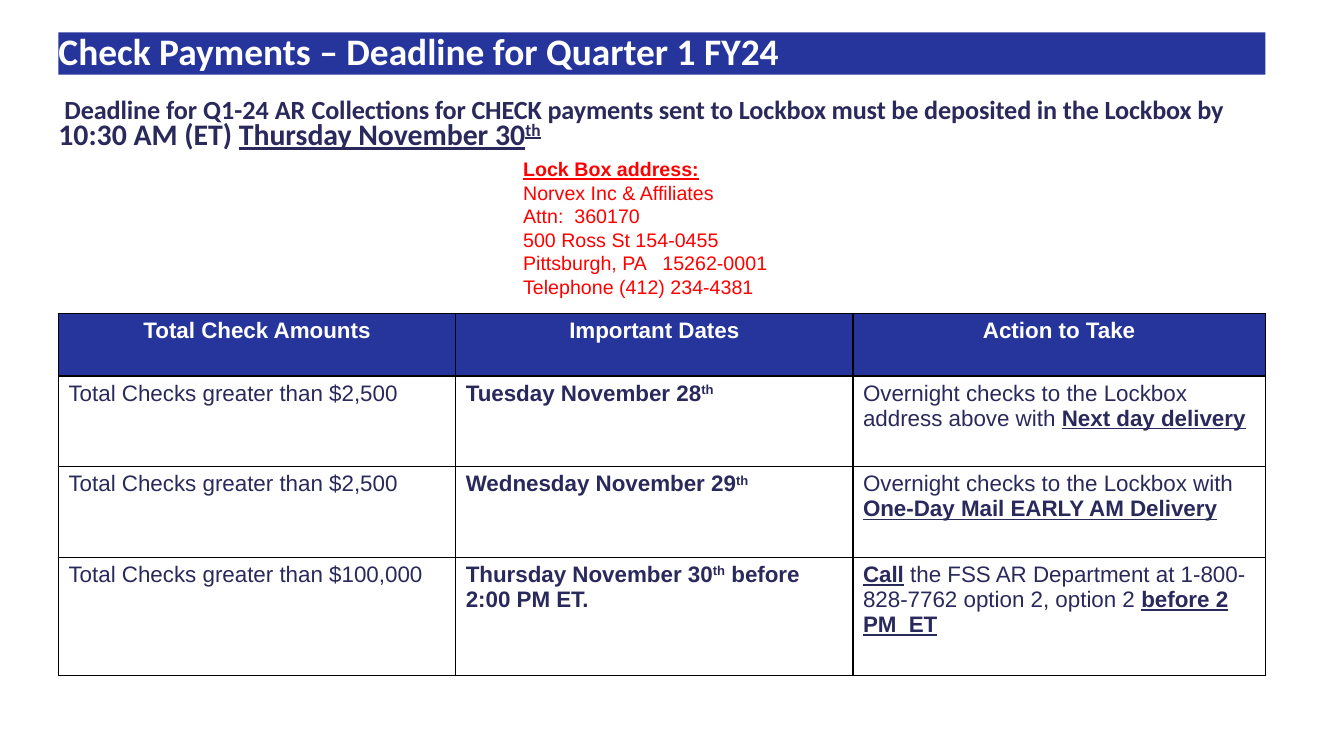
import pptx
import pptx.util
import pptx.dml.color
import pptx.enum.shapes
import pptx.enum.text
from lxml import etree
from pptx.oxml.ns import qn

Inches = pptx.util.Inches
Pt = pptx.util.Pt
RGBColor = pptx.dml.color.RGBColor
Align = pptx.enum.text.PP_ALIGN

BLUE = RGBColor(0x25, 0x35, 0x9C)
NAVY = RGBColor(0x2A, 0x29, 0x5C)
WHITE = RGBColor(0xFF, 0xFF, 0xFF)
RED = RGBColor(0xFF, 0x00, 0x00)
BORDER = "000000"

PLAIN = {"bold": False}
BOLD = {"bold": True}
STRONG = {"bold": True, "underline": True}
SUPER = {"bold": True, "baseline": 30000}
TIGHT = {"bold": True, "spc": -10}
LARGE = {"bold": True, "size": Pt(21.3)}

TITLE = [("Check Payments – Deadline for Quarter 1 FY24", BOLD)]
DEADLINE = [
    ("Deadline ", TIGHT),
    ("for Q1-24 AR ", BOLD),
    ("Collections for CHECK payments sent to Lockbox must be deposited in the Lockbox by ", TIGHT),
    ("10:30 AM (ET) ", LARGE),
    ("Thursday November 30", LARGE | STRONG),
    ("th", LARGE | STRONG | SUPER),
]
ADDRESS = [
    ("Lock Box address:", STRONG),
    ("Norvex Inc & Affiliates", PLAIN),
    ("Attn:  360170", PLAIN),
    ("500 Ross St 154-0455", PLAIN),
    ("Pittsburgh, PA   15262-0001", PLAIN),
    ("Telephone (412) 234-4381", PLAIN),
]
HEADINGS = ["Total Check Amounts", "Important Dates", "Action to Take"]
ACTIONS = [
    (
        [("Total Checks greater than $2,500", PLAIN)],
        [("Tuesday November 28", BOLD), ("th", SUPER)],
        [("Overnight checks to the Lockbox address above with ", PLAIN), ("Next day delivery", STRONG)],
    ),
    (
        [("Total Checks greater than $2,500", PLAIN)],
        [("Wednesday November 29", BOLD), ("th", SUPER)],
        [("Overnight checks to the Lockbox with ", PLAIN), ("One-Day Mail EARLY AM Delivery", STRONG)],
    ),
    (
        [("Total Checks greater than $100,000", PLAIN)],
        [("Thursday November 30", BOLD), ("th", SUPER), (" before 2:00 PM ET.", BOLD)],
        [
            ("Call", STRONG),
            (" the FSS AR Department at 1-800-828-7762 option 2, option 2 ", PLAIN),
            ("before 2 PM  ET", STRONG),
        ],
    ),
]
LEFT, WIDTH = 0.58, 11.97
COLUMN_WIDTHS = [3.94, 3.94, 4.09]
ROW_HEIGHTS = [0.62, 0.9, 0.9, 1.17]


def write_runs(paragraph, runs, name, size, color):
    """Add formatted runs to a paragraph."""
    for text, changes in runs:
        run = paragraph.add_run()
        run.text = text
        run.font.color.rgb = color
        for key, value in ({"name": name, "size": Pt(size)} | changes).items():
            if key in ("baseline", "spc"):
                run.font._element.set(key, str(value))
            else:
                setattr(run.font, key, value)


def format_banner(shape, top, height, fill, line_spacing):
    """Place a full-width filled text shape and return its paragraph."""
    shape.left, shape.top = Inches(LEFT), Inches(top)
    shape.width, shape.height = Inches(WIDTH), Inches(height)
    shape.fill.solid()
    shape.fill.fore_color.rgb = fill
    shape.line.fill.background()
    frame = shape.text_frame
    settings = {
        "margin_left": 0, "margin_right": 0, "margin_top": Inches(0.01), "margin_bottom": 0,
        "word_wrap": True, "auto_size": pptx.enum.text.MSO_AUTO_SIZE.NONE,
        "vertical_anchor": pptx.enum.text.MSO_ANCHOR.TOP,
    }
    for key, value in settings.items():
        setattr(frame, key, value)
    paragraph = frame.paragraphs[0]
    paragraph.alignment = Align.LEFT
    paragraph.line_spacing = line_spacing
    return paragraph


def add_borders(cell):
    """Draw a thin line on each side of a table cell."""
    properties = cell._tc.get_or_add_tcPr()
    for side in ("lnL", "lnR", "lnT", "lnB"):
        line = etree.SubElement(properties, qn("a:" + side), w=str(Pt(1)))
        fill = etree.SubElement(line, qn("a:solidFill"))
        etree.SubElement(fill, qn("a:srgbClr"), val=BORDER)


def add_action_table(slide):
    """Add the table of check amounts, dates and actions."""
    table = slide.shapes.add_table(
        len(ROW_HEIGHTS), len(COLUMN_WIDTHS),
        Inches(LEFT), Inches(3.11), Inches(WIDTH), Inches(sum(ROW_HEIGHTS)),
    ).table
    table.first_row = table.horz_banding = False
    for column, width in zip(table.columns, COLUMN_WIDTHS):
        column.width = Inches(width)
    for row, height in zip(table.rows, ROW_HEIGHTS):
        row.height = Inches(height)
    rows = [[[(heading, BOLD)] for heading in HEADINGS], *ACTIONS]
    for row_index, row in enumerate(rows):
        is_heading = row_index == 0
        for column_index, runs in enumerate(row):
            cell = table.cell(row_index, column_index)
            add_borders(cell)
            if is_heading:
                cell.fill.solid()
                cell.fill.fore_color.rgb = BLUE
            else:
                cell.fill.background()
            paragraph = cell.text_frame.paragraphs[0]
            paragraph.alignment = Align.CENTER if is_heading else Align.LEFT
            write_runs(paragraph, runs, "Arial", 16, WHITE if is_heading else NAVY)


def main():
    """Build the check payments slide."""
    presentation = pptx.Presentation()
    presentation.slide_width, presentation.slide_height = Inches(13.33), Inches(7.5)
    slide = presentation.slides.add_slide(presentation.slide_layouts[5])

    paragraph = format_banner(slide.shapes.title, 0.32, 0.42, BLUE, 0.9)
    write_runs(paragraph, TITLE, "Calibri", 26.7, WHITE)

    deadline = slide.shapes.add_shape(pptx.enum.shapes.MSO_SHAPE.RECTANGLE, 0, 0, 0, 0)
    deadline.shadow.inherit = False
    paragraph = format_banner(deadline, 0.96, 0.56, WHITE, Pt(19.1))
    paragraph._p.get_or_add_pPr().set("indent", str(Inches(0.06)))
    write_runs(paragraph, DEADLINE, "Calibri", 18.7, NAVY)

    address = slide.shapes.add_textbox(Inches(5.09), Inches(1.51), Inches(2.73), Inches(1.51))
    frame = address.text_frame
    frame.word_wrap = True
    for index, line in enumerate(ADDRESS):
        paragraph = frame.add_paragraph() if index else frame.paragraphs[0]
        write_runs(paragraph, [line], "Arial", 14, RED)

    add_action_table(slide)
    presentation.save("out.pptx")


if __name__ == "__main__":
    main()
